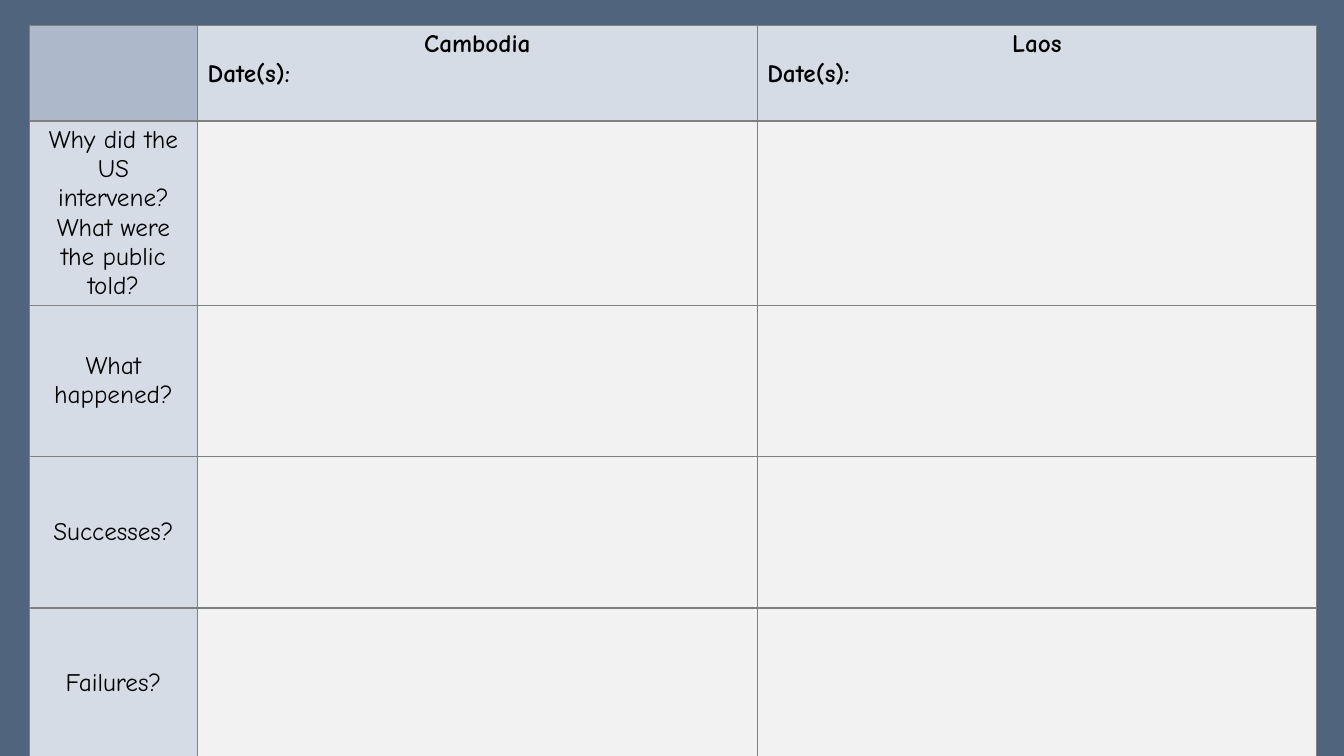
from dataclasses import dataclass

from lxml.etree import SubElement
from pptx import Presentation
from pptx.dml.color import RGBColor
from pptx.enum.text import MSO_ANCHOR, PP_ALIGN
from pptx.oxml.ns import qn
from pptx.util import Inches, Pt

COUNTRIES = ["Cambodia", "Laos"]
DATE_PROMPT = "Date(s):"
QUESTIONS = [
    ["Why did the US intervene?", "What were the public told?"],
    ["What happened?"],
    ["Successes?"],
    ["Failures?"],
]


@dataclass(frozen=True)
class Theme:
    backdrop: str = "51647E"
    corner: str = "ADB9CA"
    heading: str = "D6DCE5"
    answer: str = "F2F2F2"
    border: str = "808080"
    text: str = "000000"
    font: str = "Comic Neue"
    size: int = 18
    border_width: int = 1


THEME = Theme()
SLIDE_WIDTH, SLIDE_HEIGHT = 13.33, 7.5
LEFT, TOP = 0.29, 0.25
COLUMN_WIDTHS = [1.67] + [5.55] * len(COUNTRIES)
ROW_HEIGHTS = [0.95] + [1.5] * len(QUESTIONS)


def draw_borders(cell):
    properties = cell._tc.get_or_add_tcPr()
    for position, side in enumerate(("lnL", "lnR", "lnT", "lnB")):
        line = properties.makeelement(
            qn(f"a:{side}"), {"w": str(Pt(THEME.border_width))}
        )
        solid = SubElement(line, qn("a:solidFill"))
        SubElement(solid, qn("a:srgbClr"), val=THEME.border)
        properties.insert(position, line)


def fill_cell(cell, color, lines=(), bold=False):
    cell.fill.solid()
    cell.fill.fore_color.rgb = RGBColor.from_string(color)
    draw_borders(cell)
    cell.text_frame.text = "\n".join(lines)
    for paragraph in cell.text_frame.paragraphs:
        is_date = paragraph.text == DATE_PROMPT
        paragraph.alignment = PP_ALIGN.LEFT if is_date else PP_ALIGN.CENTER
        for run in paragraph.runs:
            run.font.name = THEME.font
            run.font.size = Pt(THEME.size)
            run.font.bold = bold
            run.font.color.rgb = RGBColor.from_string(THEME.text)


def build_comparison(slide):
    comparison = slide.shapes.add_table(
        len(ROW_HEIGHTS), len(COLUMN_WIDTHS), Inches(LEFT), Inches(TOP),
        Inches(sum(COLUMN_WIDTHS)), Inches(sum(ROW_HEIGHTS)),
    ).table
    comparison.horz_banding = False
    for column, width in zip(comparison.columns, COLUMN_WIDTHS):
        column.width = Inches(width)
    for row, height in zip(comparison.rows, ROW_HEIGHTS):
        row.height = Inches(height)

    fill_cell(comparison.cell(0, 0), THEME.corner)
    for column, country in enumerate(COUNTRIES, 1):
        fill_cell(comparison.cell(0, column), THEME.heading,
                  [country, DATE_PROMPT], bold=True)
    for row, question in enumerate(QUESTIONS, 1):
        prompt = comparison.cell(row, 0)
        prompt.vertical_anchor = MSO_ANCHOR.MIDDLE
        fill_cell(prompt, THEME.heading, question)
        for column in range(1, len(COLUMN_WIDTHS)):
            fill_cell(comparison.cell(row, column), THEME.answer)


def main():
    presentation = Presentation()
    presentation.slide_width = Inches(SLIDE_WIDTH)
    presentation.slide_height = Inches(SLIDE_HEIGHT)
    slide = presentation.slides.add_slide(presentation.slide_layouts[6])
    slide.background.fill.solid()
    slide.background.fill.fore_color.rgb = RGBColor.from_string(THEME.backdrop)
    build_comparison(slide)
    presentation.save("out.pptx")


if __name__ == "__main__":
    main()
